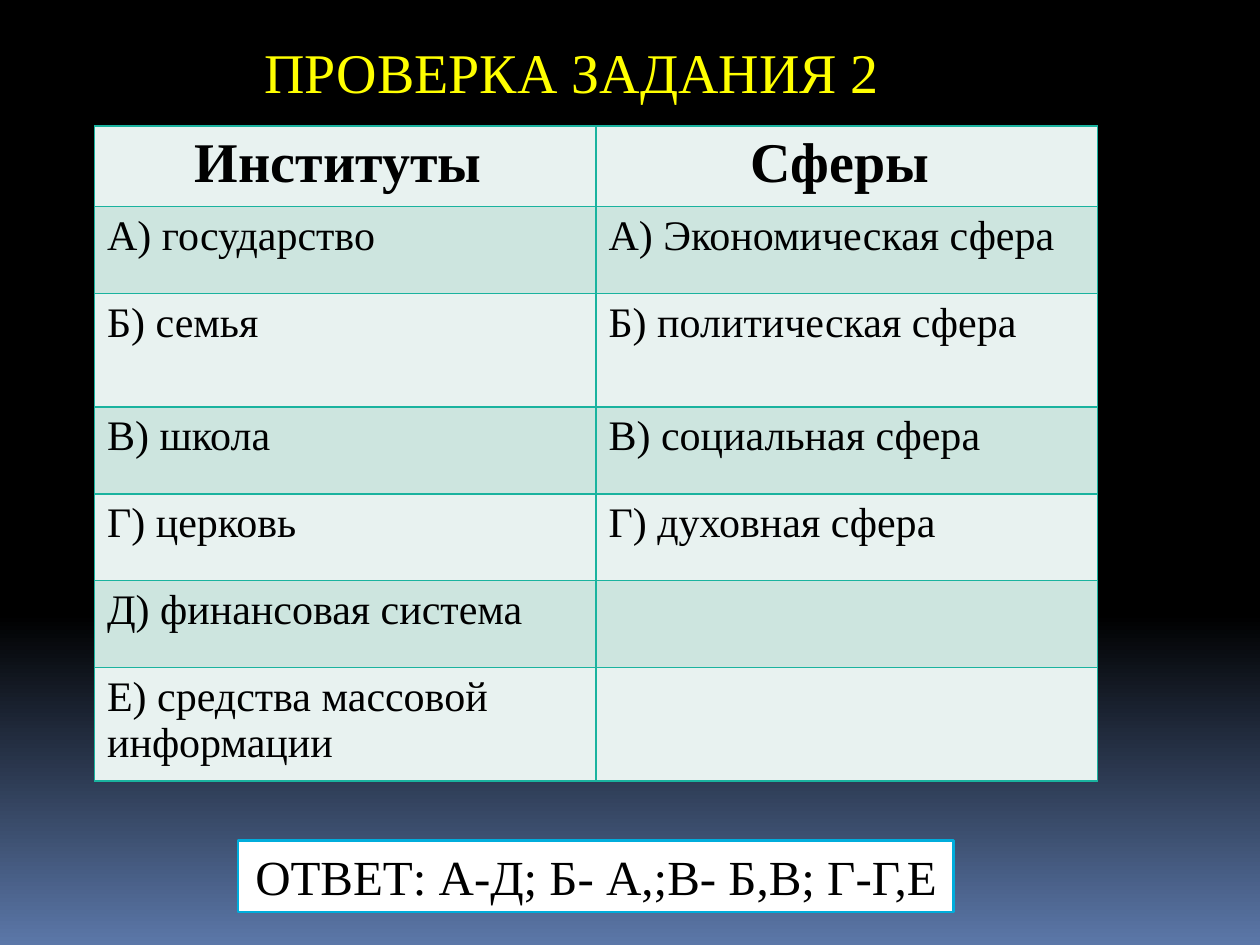
from lxml import etree
from pptx import Presentation
from pptx.dml.color import RGBColor
from pptx.enum.shapes import MSO_SHAPE
from pptx.enum.text import MSO_ANCHOR, MSO_AUTO_SIZE, PP_ALIGN
from pptx.oxml.ns import qn
from pptx.util import Inches, Pt

LEFT, CENTER = PP_ALIGN.LEFT, PP_ALIGN.CENTER
FONT = "Times New Roman"
TITLE = "ПРОВЕРКА ЗАДАНИЯ 2"
ANSWER = "ОТВЕТ: А-Д; Б- А,;В- Б,В; Г-Г,Е"
ROWS = [
    ("Институты ", "Сферы "),
    ("А) государство", "A) Экономическая сфера"),
    ("Б) семья", "Б) политическая сфера"),
    ("В) школа", "В) социальная сфера"),
    ("Г) церковь", "Г) духовная сфера"),
    ("Д) финансовая система", ""),
    ("Е) средства массовой информации", ""),
]
ROW_HEIGHTS = [0.64, 0.69, 0.9, 0.69, 0.69, 0.69, 0.9]
COLUMN_WIDTH = 3.98
BAND_COLORS = ["E8F2F0", "CDE5DF"]
BORDER_COLOR = "1AB39F"
BACKGROUND_STOPS = [(0.65, "000000"), (1, "5B77A8")]

TITLE_FORMAT = {"size": Pt(32), "bold": False, "color": "FFFF00"}
HEADER_FORMAT = {"size": Pt(32), "bold": True, "color": "000000"}
BODY_FORMAT = {"size": Pt(24), "bold": False, "color": "000000"}
ANSWER_FORMAT = {"size": Pt(28), "bold": False, "color": "000000"}


def rgb(value):
    return RGBColor.from_string(value)


def write(text_frame, text, text_format, alignment=LEFT):
    paragraph = text_frame.paragraphs[0]
    paragraph.alignment = alignment
    run = paragraph.add_run()
    run.text = text
    run.font.name = FONT
    for name, value in text_format.items():
        if name == "color":
            run.font.color.rgb = rgb(value)
        else:
            setattr(run.font, name, value)


def fit_to_text(text_frame):
    text_frame.word_wrap = False
    text_frame.auto_size = MSO_AUTO_SIZE.SHAPE_TO_FIT_TEXT


def add_borders(cell):
    properties = cell._tc.get_or_add_tcPr()
    for side in ("lnL", "lnR", "lnT", "lnB"):
        line = etree.SubElement(properties, qn(f"a:{side}"), w=str(Pt(1)))
        fill = etree.SubElement(line, qn("a:solidFill"))
        etree.SubElement(fill, qn("a:srgbClr"), val=BORDER_COLOR)


def paint_background(slide):
    fill = slide.background.fill
    fill.gradient()
    fill.gradient_angle = 270
    for stop, (position, color) in zip(fill.gradient_stops, BACKGROUND_STOPS):
        stop.position = position
        stop.color.rgb = rgb(color)


def add_title(slide):
    title = slide.shapes.add_textbox(Inches(2), Inches(0.25), Inches(5.13), Inches(0.64))
    fit_to_text(title.text_frame)
    write(title.text_frame, TITLE, TITLE_FORMAT)


def add_matching_table(slide):
    table = slide.shapes.add_table(
        len(ROWS), len(ROWS[0]), Inches(0.75), Inches(1),
        Inches(COLUMN_WIDTH * len(ROWS[0])), Inches(sum(ROW_HEIGHTS))).table
    for column in table.columns:
        column.width = Inches(COLUMN_WIDTH)
    for index, (texts, height) in enumerate(zip(ROWS, ROW_HEIGHTS)):
        table.rows[index].height = Inches(height)
        text_format, alignment = (BODY_FORMAT, LEFT) if index else (HEADER_FORMAT, CENTER)
        for cell, text in zip(table.rows[index].cells, texts):
            add_borders(cell)
            cell.fill.solid()
            cell.fill.fore_color.rgb = rgb(BAND_COLORS[index % 2])
            if text:
                write(cell.text_frame, text, text_format, alignment)


def add_answer(slide):
    answer = slide.shapes.add_shape(
        MSO_SHAPE.RECTANGLE, Inches(1.89), Inches(6.67), Inches(5.68), Inches(0.57))
    answer.shadow.inherit = False
    answer.fill.solid()
    answer.fill.fore_color.rgb = rgb("FFFFFF")
    answer.line.color.rgb = rgb("00ADDC")
    answer.line.width = Pt(1.5)
    fit_to_text(answer.text_frame)
    answer.text_frame.vertical_anchor = MSO_ANCHOR.TOP
    write(answer.text_frame, ANSWER, ANSWER_FORMAT, CENTER)


def main():
    presentation = Presentation()
    presentation.slide_width = Inches(10)
    presentation.slide_height = Inches(7.5)
    slide = presentation.slides.add_slide(presentation.slide_layouts[6])
    paint_background(slide)
    add_title(slide)
    add_matching_table(slide)
    add_answer(slide)
    presentation.save("out.pptx")


if __name__ == "__main__":
    main()
